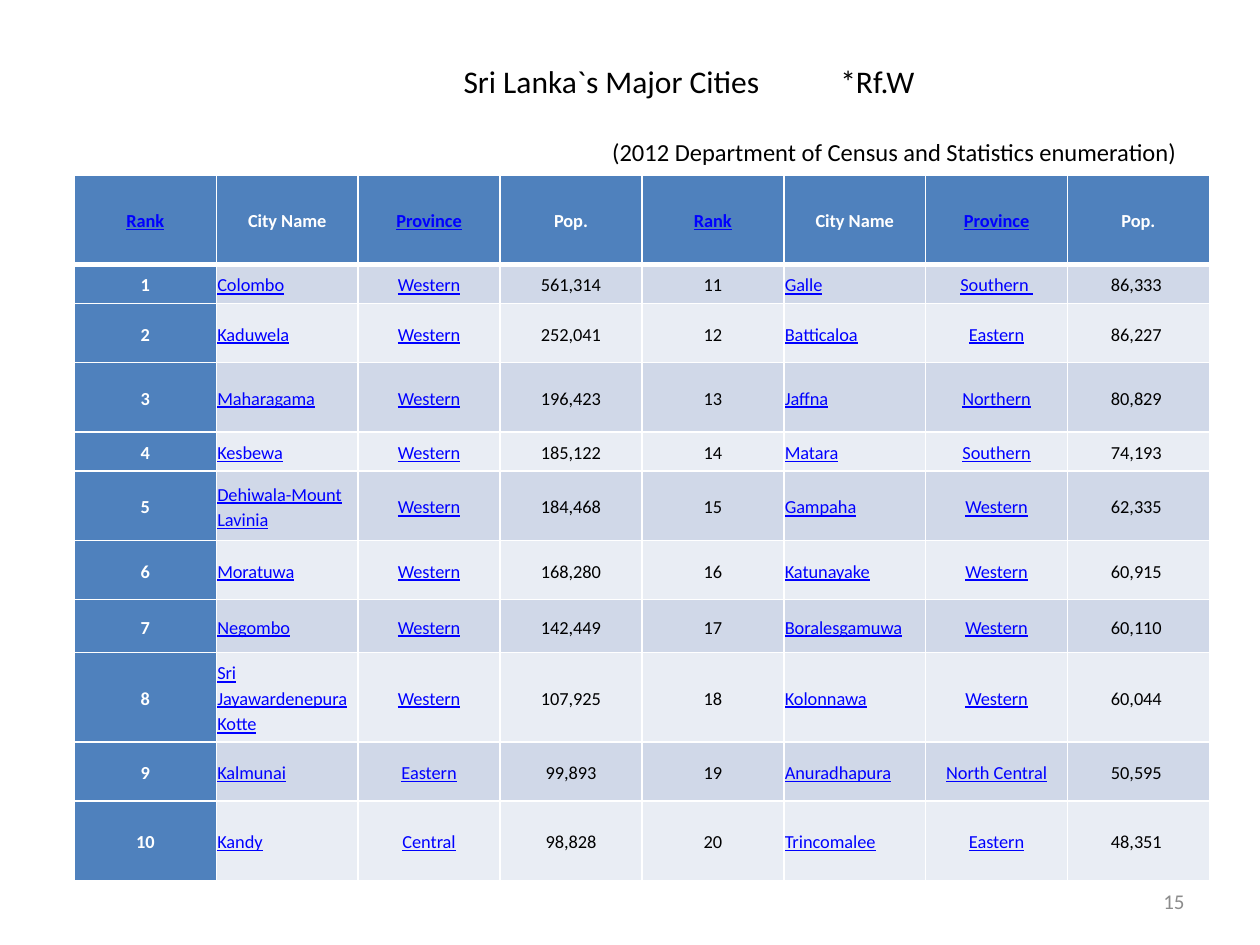
"""Build a slide with a two-column ranking table of Sri Lanka's major cities."""
from dataclasses import dataclass

from lxml import etree
from pptx import Presentation
from pptx.dml.color import RGBColor
from pptx.enum.text import MSO_ANCHOR, MSO_AUTO_SIZE, PP_ALIGN
from pptx.oxml.ns import qn
from pptx.util import Cm, Pt

LEFT, CENTER, RIGHT = PP_ALIGN.LEFT, PP_ALIGN.CENTER, PP_ALIGN.RIGHT
TOP, MIDDLE = MSO_ANCHOR.TOP, MSO_ANCHOR.MIDDLE
FIT, FIXED = MSO_AUTO_SIZE.SHAPE_TO_FIT_TEXT, MSO_AUTO_SIZE.NONE
FONT = "Calibri"
COLORS = {
    "header": "4F81BD",
    "odd": "D0D8E8",
    "even": "E9EDF4",
    "link": "0000FF",
    "white": "FFFFFF",
    "black": "000000",
    "gray": "8C8C8C",
}
HEADERS = ("Rank", "City Name", "Province", "Pop.")
LINK_HEADERS = ("Rank", "Province")
ROW_HEIGHTS = (1.8, 0.79, 1.19, 1.4, 0.79, 1.4, 1.19, 1.07, 1.8, 1.19, 1.6)
COLUMN_WIDTH = 2.86


@dataclass
class City:
    name: str
    province: str
    population: str


@dataclass
class Label:
    text: str
    left: float
    top: float
    width: float
    height: float
    size: float
    color: str = "black"
    align: PP_ALIGN = LEFT
    anchor: MSO_ANCHOR = TOP
    wrap: bool = True
    auto_size: MSO_AUTO_SIZE = FIT


@dataclass
class CellStyle:
    fill: str
    color: str = "black"
    bold: bool = False
    underline: bool = False
    align: PP_ALIGN = CENTER
    space_before: float = 0
    top_line: float = 1
    bottom_line: float = 1


CITIES = (
    City("Colombo", "Western", "561,314"),
    City("Kaduwela", "Western", "252,041"),
    City("Maharagama", "Western", "196,423"),
    City("Kesbewa", "Western", "185,122"),
    City("Dehiwala-Mount Lavinia", "Western", "184,468"),
    City("Moratuwa", "Western", "168,280"),
    City("Negombo", "Western", "142,449"),
    City("Sri Jayawardenepura Kotte", "Western", "107,925"),
    City("Kalmunai", "Eastern", "99,893"),
    City("Kandy", "Central", "98,828"),
    City("Galle", "Southern ", "86,333 "),
    City("Batticaloa", "Eastern", "86,227 "),
    City("Jaffna", "Northern", "80,829 "),
    City("Matara", "Southern", "74,193 "),
    City("Gampaha", "Western", "62,335 "),
    City("Katunayake", "Western", "60,915 "),
    City("Boralesgamuwa", "Western", "60,110 "),
    City("Kolonnawa", "Western", "60,044 "),
    City("Anuradhapura", "North Central", "50,595 "),
    City("Trincomalee", "Eastern", "48,351 "),
)
TITLE = Label("Sri Lanka`s Major Cities", 9.09, 1.12, 7.19, 1.02, 18)
LABELS = (
    Label("(2012 Department of Census and Statistics enumeration)",
          12.09, 2.64, 12.4, 0.86, 14),
    Label("*Rf.W", 16.69, 1.12, 2.03, 1.02, 18, wrap=False),
    Label("15", 18.21, 17.65, 5.92, 1.02, 12, "gray", RIGHT, MIDDLE,
          auto_size=FIXED),
)


def add_run(p, text: str, size: float, color: str):
    r = p.add_run()
    r.text = text
    r.font.name = FONT
    r.font.size = Pt(size)
    r.font.color.rgb = RGBColor.from_string(COLORS[color])
    return r


def fill_label(sp, label: Label) -> None:
    sp.left, sp.top = Cm(label.left), Cm(label.top)
    sp.width, sp.height = Cm(label.width), Cm(label.height)
    tf = sp.text_frame
    tf.word_wrap = label.wrap
    tf.auto_size = label.auto_size
    tf.vertical_anchor = label.anchor
    p = tf.paragraphs[0]
    p.alignment = label.align
    add_run(p, label.text, label.size, label.color)


def add_borders(cell, style: CellStyle) -> None:
    tc_pr = cell._tc.get_or_add_tcPr()
    widths = {"a:lnL": 1, "a:lnR": 1, "a:lnT": style.top_line,
              "a:lnB": style.bottom_line}
    for tag, width in widths.items():
        ln = etree.SubElement(tc_pr, qn(tag), w=str(Pt(width)))
        solid = etree.SubElement(ln, qn("a:solidFill"))
        etree.SubElement(solid, qn("a:srgbClr"), val=COLORS["white"])


def fill_cell(cell, text: str, style: CellStyle) -> None:
    add_borders(cell, style)
    cell.fill.solid()
    cell.fill.fore_color.rgb = RGBColor.from_string(COLORS[style.fill])
    cell.margin_left = cell.margin_right = Cm(0.02)
    cell.margin_top = cell.margin_bottom = Cm(0.02)
    cell.vertical_anchor = MIDDLE
    p = cell.text_frame.paragraphs[0]
    p.alignment = style.align
    p.line_spacing = 1.15
    p.space_before = Pt(style.space_before)
    r = add_run(p, text, 10.5, style.color)
    r.font.bold = style.bold
    r.font.underline = style.underline


def add_city_table(s) -> None:
    columns = 2 * len(HEADERS)
    half = len(CITIES) // 2
    table = s.shapes.add_table(half + 1, columns, Cm(1.5), Cm(3.53),
                               Cm(columns * COLUMN_WIDTH),
                               Cm(sum(ROW_HEIGHTS))).table
    table.horz_banding = False
    for column in table.columns:
        column.width = Cm(COLUMN_WIDTH)
    for row, height in zip(table.rows, ROW_HEIGHTS):
        row.height = Cm(height)

    for col, text in enumerate(HEADERS * 2):
        linked = text in LINK_HEADERS
        fill_cell(table.cell(0, col), text,
                  CellStyle("header", "link" if linked else "white", True,
                            linked, space_before=12, bottom_line=3))

    for i, city in enumerate(CITIES):
        block, row = divmod(i, half)
        band = "even" if row % 2 else "odd"
        top = 1 if row else 3
        rank = (CellStyle(band, top_line=top) if block else
                CellStyle("header", "white", True, top_line=top))
        entries = (
            (str(i + 1), rank),
            (city.name, CellStyle(band, "link", underline=True, align=LEFT,
                                  top_line=top)),
            (city.province, CellStyle(band, "link", underline=True,
                                      top_line=top)),
            (city.population, CellStyle(band, top_line=top)),
        )
        for col, (text, style) in enumerate(entries, block * len(HEADERS)):
            fill_cell(table.cell(row + 1, col), text, style)


def main() -> None:
    prs = Presentation()
    prs.slide_width, prs.slide_height = Cm(25.4), Cm(19.05)
    s = prs.slides.add_slide(prs.slide_layouts[5])
    add_city_table(s)
    fill_label(s.shapes.title, TITLE)
    for label in LABELS:
        sp = s.shapes.add_textbox(0, 0, 0, 0)
        fill_label(sp, label)
    prs.save("out.pptx")


if __name__ == "__main__":
    main()
